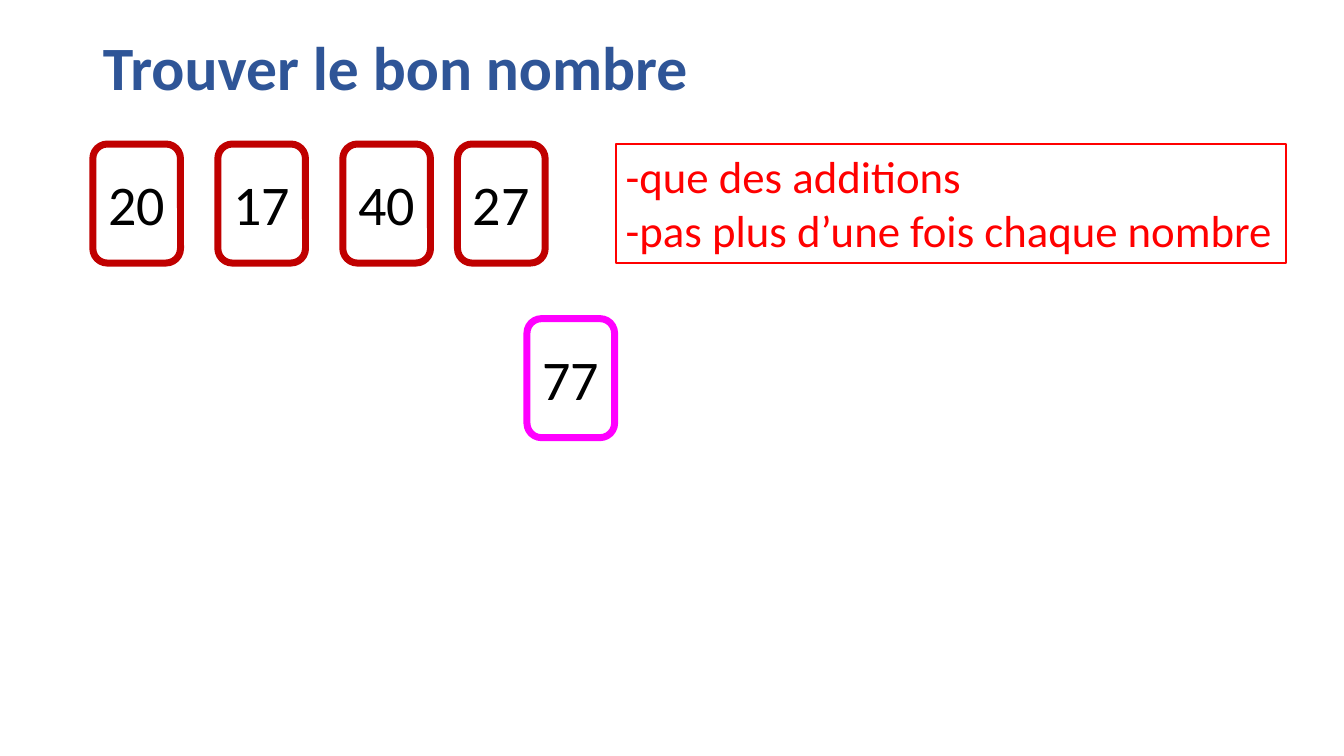
import pptx
import pptx.util
import pptx.dml.color
import pptx.enum.shapes
import pptx.enum.text

Cm = pptx.util.Cm
Pt = pptx.util.Pt
RGBColor = pptx.dml.color.RGBColor
Shape = pptx.enum.shapes.MSO_SHAPE
Anchor = pptx.enum.text.MSO_ANCHOR
Align = pptx.enum.text.PP_ALIGN

BLUE = RGBColor(0x2F, 0x55, 0x97)
DARK_RED = RGBColor(0xC0, 0x00, 0x00)
RED = RGBColor(0xFF, 0x00, 0x00)
MAGENTA = RGBColor(0xFF, 0x00, 0xFF)
BLACK = RGBColor(0x00, 0x00, 0x00)

CARD_WIDTH, CARD_HEIGHT = 2.21, 3
ROW_TOP = 3.63


def apply_format(target, values):
    for name, value in values.items():
        setattr(target, name, value)


def write_lines(frame, lines, font, para_format):
    for index, line in enumerate(lines):
        para = frame.paragraphs[0] if index == 0 else frame.add_paragraph()
        apply_format(para, para_format)
        span = para.add_run()
        span.text = line
        apply_format(span.font, {"name": "Calibri", "size": Pt(font["size"]), "bold": font.get("bold", False)})
        span.font.color.rgb = font["color"]


def add_outline(page, kind, box, color, weight):
    shape = page.shapes.add_shape(kind, *map(Cm, box))
    shape.shadow.inherit = False
    shape.fill.background()
    shape.line.color.rgb = color
    shape.line.width = Pt(weight)
    return shape


def add_title(page, box, text):
    title = page.shapes.title
    apply_format(title, dict(zip(("left", "top", "width", "height"), map(Cm, box))))
    frame = title.text_frame
    apply_format(frame, {"word_wrap": True, "vertical_anchor": Anchor.MIDDLE})
    write_lines(frame, [text], {"size": 44, "bold": True, "color": BLUE},
                {"alignment": Align.LEFT, "line_spacing": 0.9})


def add_card(page, left, top, number, color):
    card = add_outline(page, Shape.ROUNDED_RECTANGLE, (left, top, CARD_WIDTH, CARD_HEIGHT), color, 5)
    frame = card.text_frame
    apply_format(frame, {"word_wrap": False, "vertical_anchor": Anchor.MIDDLE,
                         "margin_left": 0, "margin_right": 0})
    write_lines(frame, [number], {"size": 40, "color": BLACK}, {"alignment": Align.CENTER})


def add_rules(page, box, lines):
    rules = add_outline(page, Shape.RECTANGLE, box, RED, 1)
    frame = rules.text_frame
    apply_format(frame, {"word_wrap": True, "vertical_anchor": Anchor.TOP})
    write_lines(frame, lines, {"size": 32, "color": RED}, {"alignment": Align.LEFT})


def main():
    deck = pptx.Presentation()
    apply_format(deck, {"slide_width": Cm(33.87), "slide_height": Cm(19.05)})
    page = deck.slides.add_slide(deck.slide_layouts[5])
    add_title(page, (2.34, 0.69, 29.21, 2.16), "Trouver le bon nombre")
    for left, number in ((2.34, "20"), (5.49, "17"), (8.64, "40"), (11.53, "27")):
        add_card(page, left, ROW_TOP, number, DARK_RED)
    add_rules(page, (15.52, ROW_TOP, 16.89, CARD_HEIGHT),
              ["-que des additions", "-pas plus d’une fois chaque nombre"])
    add_card(page, 13.28, 8.03, "77", MAGENTA)
    deck.save("out.pptx")


if __name__ == "__main__":
    main()
